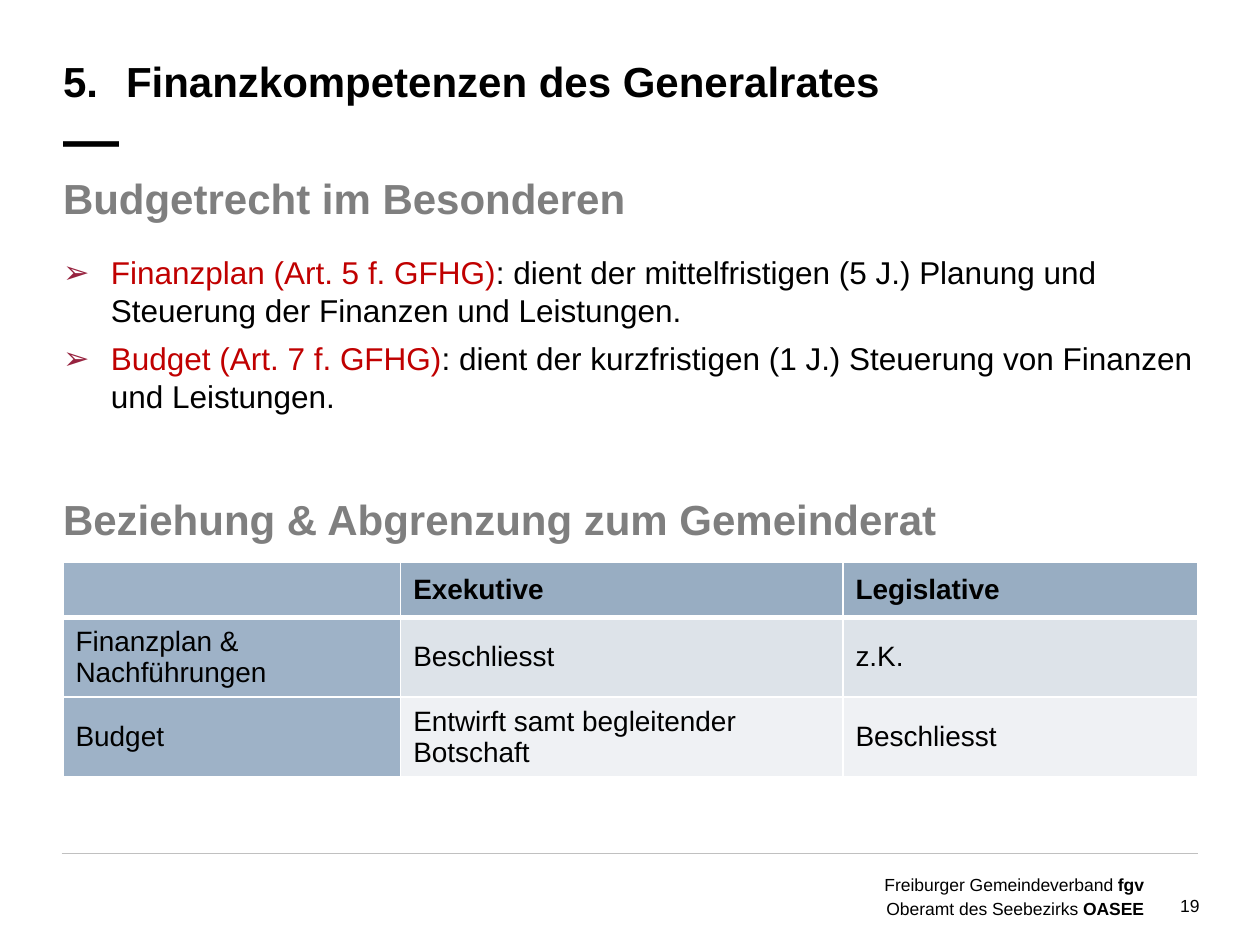
from dataclasses import dataclass

from lxml import etree
from pptx import Presentation
from pptx.dml.color import RGBColor
from pptx.enum.shapes import MSO_CONNECTOR
from pptx.enum.text import MSO_ANCHOR, PP_ALIGN
from pptx.oxml.ns import qn
from pptx.util import Inches, Pt

LEFT, RIGHT = PP_ALIGN.LEFT, PP_ALIGN.RIGHT
MIDDLE = MSO_ANCHOR.MIDDLE
STRAIGHT = MSO_CONNECTOR.STRAIGHT


@dataclass(frozen=True)
class Theme:
    font: str = "Arial"
    black: str = "000000"
    white: str = "FFFFFF"
    heading: str = "7F7F7F"
    term: str = "C00000"
    bullet: str = "97233F"
    rule: str = "C0C0C0"
    header_fill: str = "98ADC2"
    label_fill: str = "9EB2C7"
    band_fills: tuple = ("DDE3E9", "EFF1F4")
    title_size: int = 24
    dash_size: int = 32
    body_size: int = 18
    table_size: int = 16
    footer_size: int = 10


THEME = Theme()
MARGIN, CONTENT_WIDTH = 0.5, 9.01


def child(parent, tag, **attributes):
    return etree.SubElement(parent, qn(tag), {k: str(v) for k, v in attributes.items()})


def add_bullet(paragraph, indent):
    properties = paragraph._p.get_or_add_pPr()
    properties.set("marL", str(Inches(indent)))
    properties.set("indent", str(-Inches(indent)))
    child(child(properties, "a:buClr"), "a:srgbClr", val=THEME.bullet)
    child(properties, "a:buFont", typeface=THEME.font)
    child(properties, "a:buChar", char="➢")


def add_tab_stop(paragraph, position):
    tabs = child(paragraph._p.get_or_add_pPr(), "a:tabLst")
    child(tabs, "a:tab", pos=Inches(position), algn="l")


def write_text(frame, paragraphs, size, color=THEME.black, bold=False, align=LEFT,
               line_spacing=None, space_after=0, bullet_indent=None, tab=None):
    """Fill a frame; a paragraph is a list of (text, overrides), "\\n" breaks a line."""
    frame.word_wrap = True
    for index, runs in enumerate(paragraphs):
        paragraph = frame.paragraphs[0] if index == 0 else frame.add_paragraph()
        if bullet_indent:
            add_bullet(paragraph, bullet_indent)
        if tab:
            add_tab_stop(paragraph, tab)
        paragraph.alignment = align
        paragraph.space_after = Pt(space_after)
        if line_spacing:
            paragraph.line_spacing = Pt(line_spacing)
        for text, overrides in runs:
            if text == "\n":
                paragraph.add_line_break()
                continue
            look = {"size": size, "color": color, "bold": bold, **overrides}
            run = paragraph.add_run()
            run.text = text
            run.font.name = THEME.font
            run.font.size = Pt(look["size"])
            run.font.bold = look["bold"]
            run.font.color.rgb = RGBColor.from_string(look["color"])


def add_text(slide, box, paragraphs, **text_format):
    frame = slide.shapes.add_textbox(*map(Inches, box)).text_frame
    frame.margin_left = frame.margin_top = frame.margin_right = frame.margin_bottom = 0
    write_text(frame, paragraphs, **text_format)


def add_title(slide, box, number, title):
    runs = [(f"{number}\t{title}", {}), ("\n", {}), ("—", {"size": THEME.dash_size})]
    add_text(slide, box, [runs], size=THEME.title_size, bold=True, line_spacing=37, tab=0.5)


def add_heading(slide, box, heading):
    add_text(slide, box, [[(heading, {})]], size=THEME.title_size,
             color=THEME.heading, bold=True, space_after=6)


def add_definitions(slide, box, definitions):
    paragraphs = [[(term, {"color": THEME.term}), (f": {meaning}", {})]
                  for term, meaning in definitions]
    add_text(slide, box, paragraphs, size=THEME.body_size, space_after=6, bullet_indent=0.38)


def set_borders(cell, bottom_width):
    properties = cell._tc.get_or_add_tcPr()
    widths = {"a:lnL": 1, "a:lnR": 1, "a:lnT": 1, "a:lnB": bottom_width}
    for position, (tag, width) in enumerate(widths.items()):
        line = child(properties, tag, w=Pt(width))
        child(child(line, "a:solidFill"), "a:srgbClr", val=THEME.white)
        properties.insert(position, line)


def cell_fill(row, column):
    if column == 0:
        return THEME.label_fill
    return THEME.header_fill if row == 0 else THEME.band_fills[(row - 1) % 2]


def add_responsibilities(slide, box, rows, column_widths, row_heights):
    table = slide.shapes.add_table(len(rows), len(column_widths), *map(Inches, box)).table
    for column, width in zip(table.columns, column_widths):
        column.width = Inches(width)
    for row, height in zip(table.rows, row_heights):
        row.height = Inches(height)
    for r, texts in enumerate(rows):
        for c, text in enumerate(texts):
            cell = table.cell(r, c)
            cell.vertical_anchor = MIDDLE
            cell.fill.solid()
            cell.fill.fore_color.rgb = RGBColor.from_string(cell_fill(r, c))
            set_borders(cell, bottom_width=3 if r == 0 else 1)
            if text:
                write_text(cell.text_frame, [[(text, {})]], size=THEME.table_size, bold=r == 0)


def add_footer(slide, box, organisations, page):
    left, top, width, _ = box
    right = left + width
    rule = slide.shapes.add_connector(
        STRAIGHT, Inches(left), Inches(top), Inches(right), Inches(top))
    rule.line.color.rgb = RGBColor.from_string(THEME.rule)
    rule.line.width = Pt(0.25)
    child(rule._element.spPr, "a:effectLst")
    lines = [[(f"{name} ", {}), (short, {"bold": True})] for name, short in organisations]
    add_text(slide, (right - 2.6, top + 0.15, 2.17, 0.35), lines,
             size=THEME.footer_size, align=RIGHT, line_spacing=13.4)
    add_text(slide, (right - 0.43, top + 0.33, 0.44, 0.17), [[(page, {})]],
             size=THEME.footer_size, align=RIGHT)


def main():
    deck = Presentation()
    deck.slide_width, deck.slide_height = Inches(10), Inches(7.5)
    slide = deck.slides.add_slide(deck.slide_layouts[6])

    add_footer(slide, (0.49, 6.77, 9.02, 0.5), [
        ("Freiburger Gemeindeverband", "fgv"),
        ("Oberamt des Seebezirks", "OASEE"),
    ], "19")
    add_title(slide, (MARGIN, 0.33, CONTENT_WIDTH, 1.04),
              "5.", "Finanzkompetenzen des Generalrates")
    add_heading(slide, (MARGIN, 1.37, CONTENT_WIDTH, 0.4), "Budgetrecht im Besonderen")
    add_definitions(slide, (MARGIN, 2.01, CONTENT_WIDTH, 1.3), [
        ("Finanzplan (Art. 5 f. GFHG)",
         "dient der mittelfristigen (5 J.) Planung und Steuerung der Finanzen und Leistungen."),
        ("Budget (Art. 7 f. GFHG)",
         "dient der kurzfristigen (1 J.) Steuerung von Finanzen und Leistungen."),
    ])
    add_heading(slide, (MARGIN, 3.92, CONTENT_WIDTH, 0.4),
                "Beziehung & Abgrenzung zum Gemeinderat")
    add_responsibilities(slide, (MARGIN, 4.46, CONTENT_WIDTH, 1.7), [
        ("", "Exekutive", "Legislative"),
        ("Finanzplan & Nachführungen", "Beschliesst", "z.K."),
        ("Budget", "Entwirft samt begleitender Botschaft", "Beschliesst"),
    ], column_widths=(2.68, 3.51, 2.82), row_heights=(0.44, 0.63, 0.63))

    deck.save("out.pptx")


if __name__ == "__main__":
    main()
